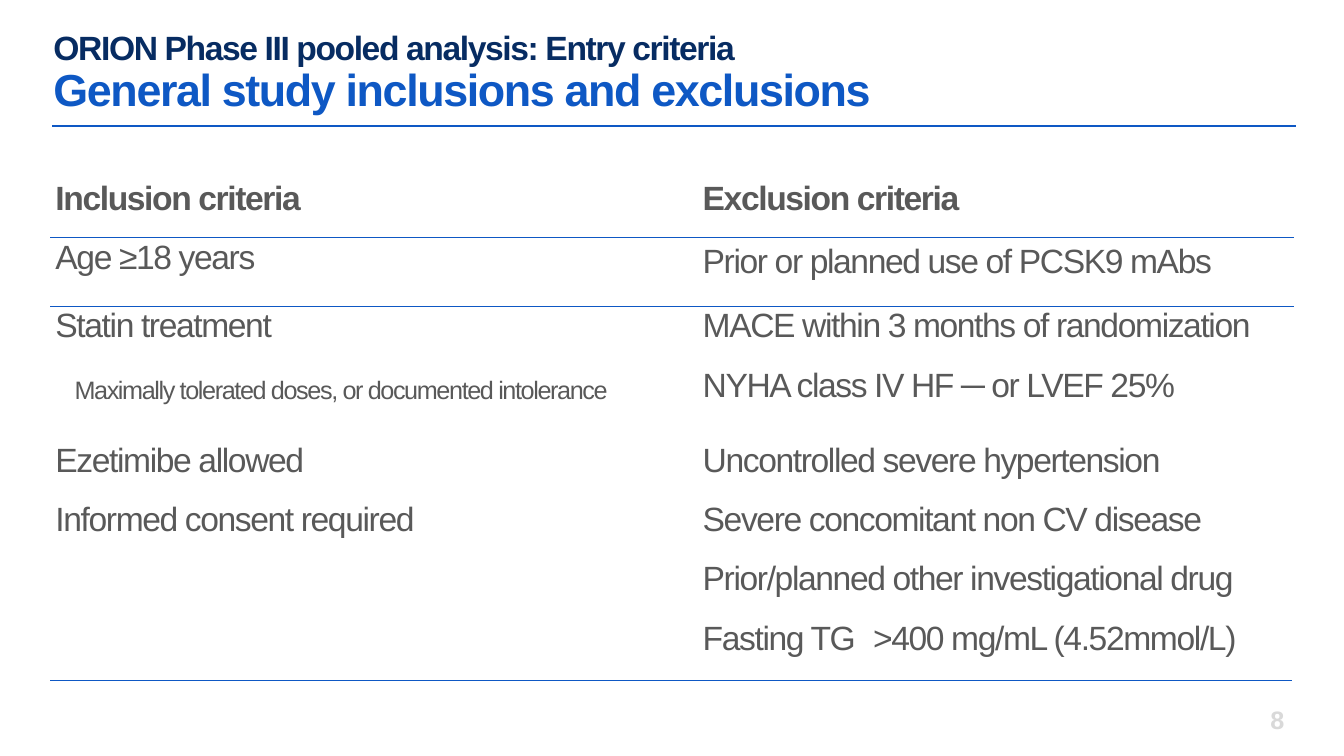
import pptx
import pptx.util
import pptx.dml.color
import pptx.enum.shapes
import pptx.enum.text
import pptx.oxml
import pptx.oxml.ns

Inches, Pt = pptx.util.Inches, pptx.util.Pt
qn = pptx.oxml.ns.qn
ANCHOR = pptx.enum.text.MSO_ANCHOR
ALIGN = pptx.enum.text.PP_ALIGN

NAVY, BLUE, GREY, PALE = "072C62", "0E58C4", "595959", "D9D9D9"
FONT = "Arial"
NO_STYLE = "{2D5ABB26-0587-4C30-8999-92F81FD0307C}"

TITLE_LINES = [
    ("ORION Phase III pooled analysis: Entry criteria", 24, NAVY),
    ("General study inclusions and exclusions", 32, BLUE),
]
CRITERIA = [
    ("Inclusion criteria", "Exclusion criteria"),
    ("Age ≥18 years", "Prior or planned use of PCSK9 mAbs"),
    ("Statin treatment", "MACE within 3 months of randomization"),
    ("Maximally tolerated doses, or documented intolerance",
     "NYHA class IV HF ─ or LVEF 25%"),
    ("Ezetimibe allowed", "Uncontrolled severe hypertension"),
    ("Informed consent required", "Severe concomitant non CV disease"),
    ("", "Prior/planned other investigational drug"),
    ("", "Fasting TG\t>400 mg/mL (4.52mmol/L)"),
]
COLUMN_WIDTHS = [6.22, 0.2, 5.91]
ROW_HEIGHTS = [0.59, 0.68, 0.59, 0.74, 0.59, 0.59, 0.59, 0.59]
DETAIL_ROW = 3
NATURAL_SPACING = (1, 1)
RULES = [(0.52, 12.85, 1.25, 0.75), (0.5, 12.81, 6.75, 0.25)]
NUMBER_TABS = [0.42, 2.17, 4.32, 6.46, 8.62, 10.75]


def rgb(value):
    return pptx.dml.color.RGBColor.from_string(value)


def format_span(span, size, color, bold=True, spacing=-100):
    """Set the run's font; spacing is in hundredths of a point."""
    span.font.name = FONT
    span.font.size = Pt(size)
    span.font.bold = bold
    span.font.color.rgb = rgb(color)
    if spacing:
        span.font._element.set("spc", str(spacing))


def add_tabs(para, stops):
    tab_list = para._p.get_or_add_pPr().makeelement(qn("a:tabLst"), {})
    for stop in stops:
        tab = tab_list.makeelement(qn("a:tab"), {"pos": str(Inches(stop)), "algn": "l"})
        tab_list.append(tab)
    para._p.get_or_add_pPr().append(tab_list)


def add_border(cell, side):
    border = pptx.oxml.parse_xml(
        f'<a:{side} xmlns:a="http://schemas.openxmlformats.org/drawingml/2006/main" '
        f'w="{Pt(1)}"><a:solidFill><a:srgbClr val="{BLUE}"/></a:solidFill></a:{side}>')
    cell._tc.get_or_add_tcPr().insert(0, border)


def set_margins(frame, bottom=0):
    frame.margin_left = frame.margin_right = frame.margin_top = 0
    frame.margin_bottom = Inches(bottom)


def add_rules(page):
    for left, right, top, width in RULES:
        rule = page.shapes.add_connector(
            pptx.enum.shapes.MSO_CONNECTOR.STRAIGHT,
            Inches(left), Inches(top), Inches(right), Inches(top))
        rule.line.color.rgb = rgb(BLUE)
        rule.line.width = Pt(width)
        properties = rule._element.spPr
        properties.append(properties.makeelement(qn("a:effectLst"), {}))


def add_page_number(page):
    box = page.shapes.add_textbox(Inches(12.6), Inches(6.77), Inches(0.25), Inches(0.74))
    frame = box.text_frame
    set_margins(frame)
    frame.word_wrap = False
    frame.vertical_anchor = ANCHOR.MIDDLE
    frame.text = "8\t"
    para = frame.paragraphs[0]
    add_tabs(para, NUMBER_TABS)
    para.alignment = ALIGN.RIGHT
    format_span(para.runs[0], 18, PALE, spacing=0)


def add_criteria(page):
    table = page.shapes.add_table(
        len(ROW_HEIGHTS), len(COLUMN_WIDTHS), Inches(0.5), Inches(1.77),
        Inches(sum(COLUMN_WIDTHS)), Inches(sum(ROW_HEIGHTS))).table
    table._tbl.tblPr.find(qn("a:tableStyleId")).text = NO_STYLE
    table.first_row = table.horz_banding = False
    for column, width in zip(table.columns, COLUMN_WIDTHS):
        column.width = Inches(width)
    for row, height in zip(table.rows, ROW_HEIGHTS):
        row.height = Inches(height)
    table.cell(2, 1).merge(table.cell(4, 1))

    for row, (inclusion, exclusion) in enumerate(CRITERIA):
        for column, text in enumerate((inclusion, "", exclusion)):
            cell = table.cell(row, column)
            cell.fill.background()
            cell.margin_left = cell.margin_right = Inches(0.05)
            cell.margin_top = cell.margin_bottom = Inches(0.05)
            if row < 2:
                add_border(cell, ("a:lnB", "a:lnT")[row][2:])
            if not text:
                continue
            cell.text_frame.text = text
            para = cell.text_frame.paragraphs[0]
            if "\t" in text:
                add_tabs(para, [1.69])
            if (row, column // 2) != NATURAL_SPACING:
                para.line_spacing = Pt(24)
            is_detail = row == DETAIL_ROW and column == 0
            if is_detail:
                indents = para._p.get_or_add_pPr()
                indents.set("marL", str(Inches(2.56)))
                indents.set("indent", str(Inches(-2.37)))
            format_span(para.runs[0], 18 if is_detail else 24, GREY, bold=row == 0)


def fill_title(title):
    title.left, title.top = Inches(0.53), Inches(0.28)
    title.width, title.height = Inches(11.26), Inches(0.97)
    frame = title.text_frame
    set_margins(frame, bottom=0.1)
    frame.word_wrap = True
    frame.auto_size = pptx.enum.text.MSO_AUTO_SIZE.NONE
    frame.vertical_anchor = ANCHOR.BOTTOM
    frame.text = "\v".join(line for line, size, color in TITLE_LINES)
    para = frame.paragraphs[0]
    para.alignment = ALIGN.LEFT
    para.line_spacing = 0.9
    for span, (line, size, color) in zip(para.runs, TITLE_LINES):
        format_span(span, size, color)
    line_break = para._p.find(qn("a:br"))
    line_break.append(line_break.makeelement(qn("a:rPr"), {"sz": "2400"}))


def main():
    deck = pptx.Presentation()
    deck.slide_width, deck.slide_height = Inches(13.33), Inches(7.5)
    page = deck.slides.add_slide(deck.slide_layouts[5])
    add_rules(page)
    add_page_number(page)
    add_criteria(page)
    fill_title(page.shapes.title)
    deck.save("out.pptx")


if __name__ == "__main__":
    main()
